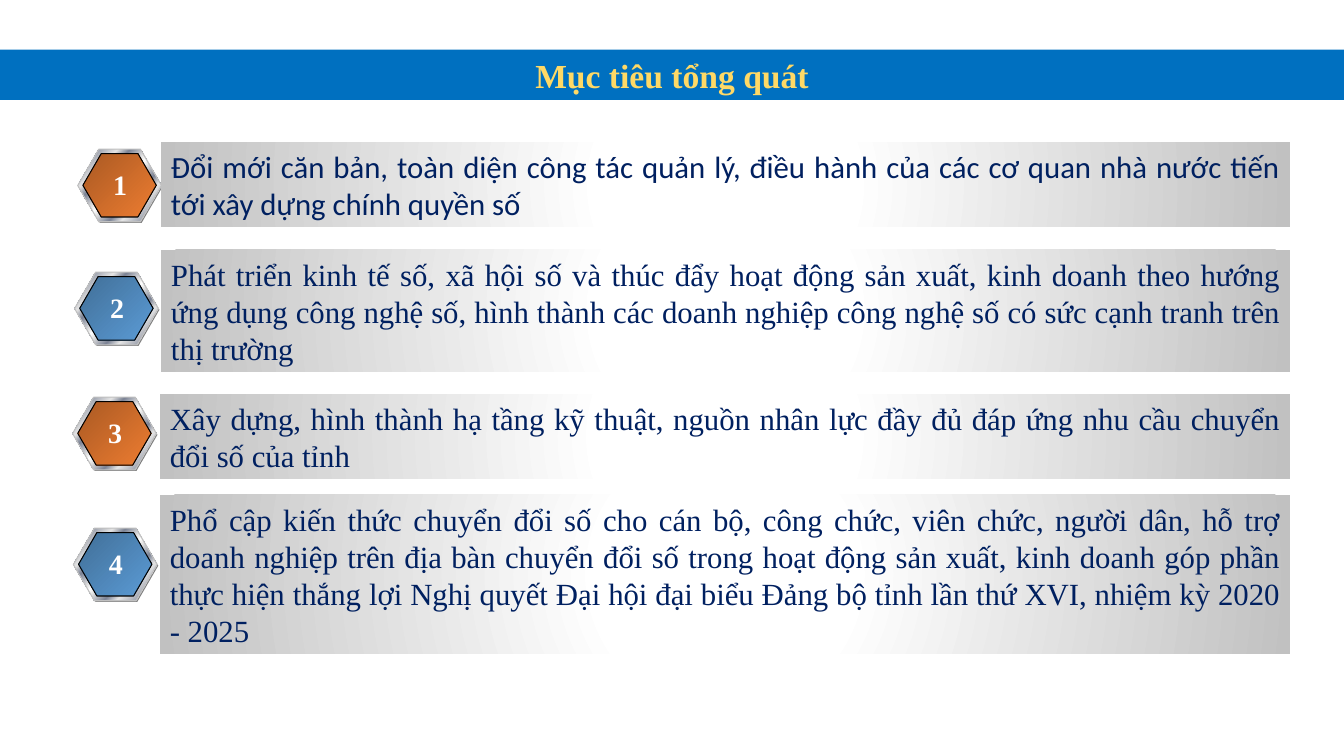
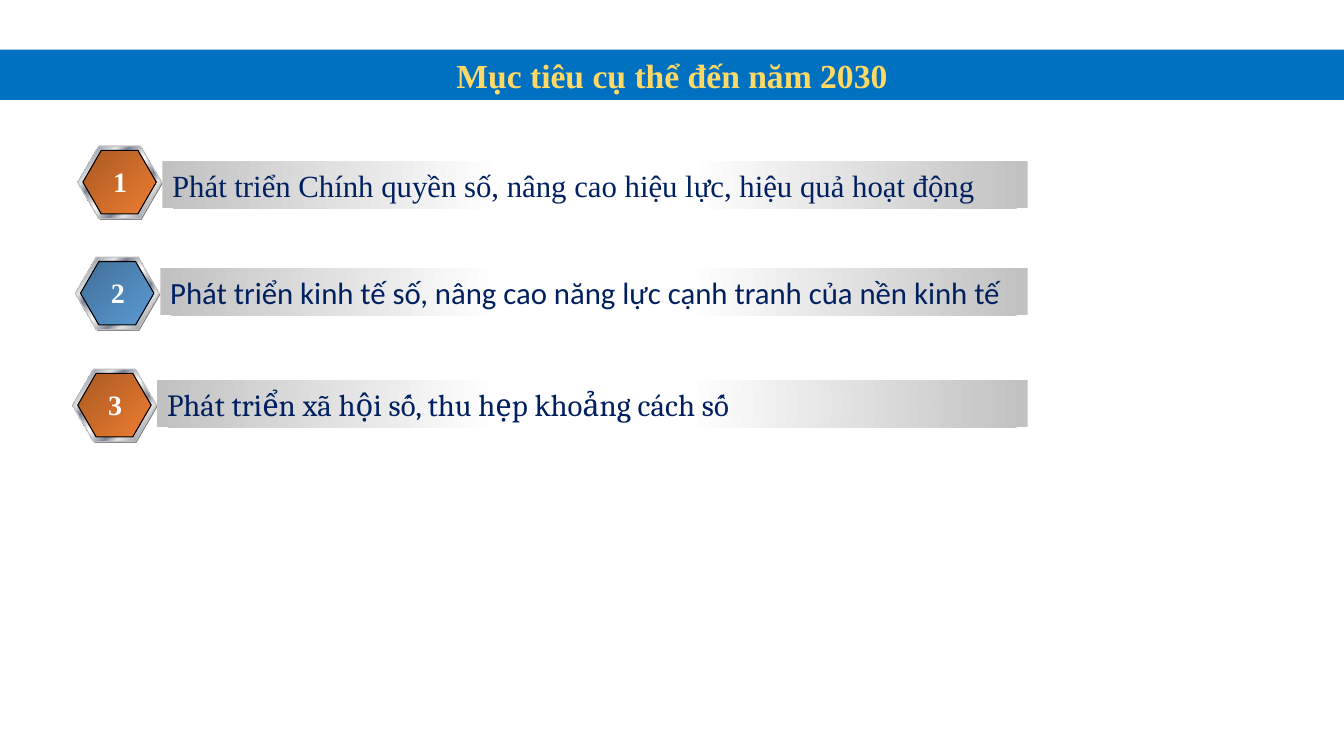
from dataclasses import dataclass

from pptx import Presentation
from pptx.dml.color import RGBColor
from pptx.enum.shapes import MSO_SHAPE
from pptx.enum.text import MSO_ANCHOR, PP_ALIGN
from pptx.oxml import parse_xml
from pptx.oxml.ns import nsdecls
from pptx.util import Cm, Pt


@dataclass(frozen=True)
class Theme:
    """Colours, gradients, fonts and type sizes of the deck."""
    band: str = "0070C0"
    title: str = "FFD966"
    body: str = "002060"
    number: str = "FFFFFF"
    rim_shade: str = "808080"
    rim_line: str = "C0C0C0"
    core_line: str = "000000"
    cores: tuple = (
        ((0, "AA5923"), (100, "ED7D31")),
        ((0, "416F98"), (100, "5B9BD5")),
    )
    metal: tuple = (
        (0, "E6E6E6"), (8, "7D8496"), (26, "E6E6E6"), (34, "7D8496"),
        (46, "E6E6E6"), (50, "FFFFFF"), (54, "E6E6E6"), (66, "7D8496"),
        (74, "E6E6E6"), (93, "7D8496"), (100, "E6E6E6"),
    )
    bar: tuple = ((22, "FFFFFF"), (100, "C1C1C1"))
    serif: str = "Times New Roman"
    sans: str = "Calibri"
    book: str = "Cambria"
    title_size: int = 24
    body_size: int = 22
    number_size: int = 20


@dataclass(frozen=True)
class Goal:
    """One numbered goal, with positions in centimetres."""
    text: str
    badge: tuple
    bar: tuple
    lines: int = 1
    font: str = Theme.serif


DIAGONAL = '<a:lin ang="2700000" scaled="1"/>'
RADIAL = ('<a:path path="circle"><a:fillToRect l="50000" t="50000" '
          'r="50000" b="50000"/></a:path>')


class Builder:
    """Draws styled elements on the current page."""

    def __init__(self, theme):
        """Open a widescreen deck."""
        self.theme = theme
        self.deck = Presentation()
        self.deck.slide_width = Cm(33.87)
        self.deck.slide_height = Cm(19.05)
        self.page = None

    def add_page(self, title):
        """Start a page with its title band."""
        self.page = self.deck.slides.add_slide(self.deck.slide_layouts[6])
        theme = self.theme
        band = self.shape(self.page.shapes, MSO_SHAPE.RECTANGLE,
                          (0, 1.25, 33.87, 1.27), theme.band)
        self.label(band, title, theme.serif, theme.title_size, theme.title,
                   PP_ALIGN.CENTER, bold=True)

    def shape(self, shapes, kind, place, fill, shading=DIAGONAL, line=None):
        """Add a preset shape with a plain or gradient fill."""
        shape = shapes.add_shape(kind, *(Cm(value) for value in place))
        shape.shadow.inherit = False
        if isinstance(fill, str):
            shape.fill.solid()
            shape.fill.fore_color.rgb = RGBColor.from_string(fill)
        else:
            self.shade(shape, fill, shading)
        if line:
            shape.line.color.rgb = RGBColor.from_string(line)
            shape.line.width = Pt(0.75)
        else:
            shape.line.fill.background()
        return shape

    def shade(self, shape, stops, shading):
        """Give a shape a gradient fill."""
        marks = "".join(
            f'<a:gs pos="{position * 1000}"><a:srgbClr val="{colour}"/></a:gs>'
            for position, colour in stops)
        gradient = parse_xml(
            f'<a:gradFill {nsdecls("a")} rotWithShape="1">'
            f'<a:gsLst>{marks}</a:gsLst>{shading}</a:gradFill>')
        shape._element.spPr.find("{*}prstGeom").addnext(gradient)

    def label(self, box, text, font, size, colour, align, bold=False, wrap=True):
        """Put one paragraph into a box."""
        frame = box.text_frame
        frame.word_wrap = wrap
        frame.vertical_anchor = MSO_ANCHOR.MIDDLE
        para = frame.paragraphs[0]
        para.alignment = align
        span = para.add_run()
        span.text = text
        span.font.name = font
        span.font.size = Pt(size)
        span.font.bold = bold
        span.font.color.rgb = RGBColor.from_string(colour)

    def badge(self, left, top, core):
        """Draw a hexagon with a metal rim."""
        theme = self.theme
        group = self.page.shapes.add_group_shape()
        layers = (
            ((left + 0.03, top + 0.03, 2.11, 1.83), theme.rim_shade, None),
            ((left, top, 2.11, 1.83), theme.metal, theme.rim_line),
            ((left + 0.13, top + 0.11, 1.85, 1.6), core, theme.core_line),
        )
        for place, fill, line in layers:
            hexagon = self.shape(group.shapes, MSO_SHAPE.HEXAGON, place, fill,
                                 line=line)
            hexagon.adjustments[0] = 0.29

    def number(self, left, top, value):
        """Set the number of a badge."""
        theme = self.theme
        box = self.page.shapes.add_textbox(
            Cm(left + 0.64), Cm(top + 0.33), Cm(0.86), Cm(1.12))
        self.label(box, str(value), theme.serif, theme.number_size,
                   theme.number, PP_ALIGN.CENTER, bold=True, wrap=False)

    def bar(self, goal, right):
        """Draw the text bar of a goal up to the right edge."""
        theme = self.theme
        left, top = goal.bar
        place = (left, top, right - left, 0.25 + 0.94 * goal.lines)
        box = self.shape(self.page.shapes, MSO_SHAPE.RECTANGLE, place,
                         theme.bar, RADIAL)
        self.label(box, goal.text, goal.font, theme.body_size, theme.body,
                   PP_ALIGN.JUSTIFY)

    def goals(self, goals, right):
        """Draw a numbered list of goals in alternating colours."""
        cores = self.theme.cores
        for index, goal in enumerate(goals):
            self.badge(*goal.badge, cores[index % len(cores)])
            self.bar(goal, right)
            self.number(*goal.badge, index + 1)


GENERAL_GOALS = (
    Goal("Đổi mới căn bản, toàn diện công tác quản lý, điều hành của các cơ quan "
         "nhà nước tiến tới xây dựng chính quyền số",
         (1.96, 3.76), (4.06, 3.58), 2, Theme.sans),
    Goal("Phát triển kinh tế số, xã hội số và thúc đẩy hoạt động sản xuất, kinh "
         "doanh theo hướng ứng dụng công nghệ số, hình thành các doanh nghiệp "
         "công nghệ số có sức cạnh tranh trên thị trường",
         (1.88, 6.86), (4.06, 6.3), 3),
    Goal("Xây dựng, hình thành hạ tầng kỹ thuật, nguồn nhân lực đầy đủ đáp ứng "
         "nhu cầu chuyển đổi số của tỉnh",
         (1.83, 10.01), (4.03, 9.93), 2),
    Goal("Phổ cập kiến thức chuyển đổi số cho cán bộ, công chức, viên chức, người "
         "dân, hỗ trợ doanh nghiệp trên địa bàn chuyển đổi số trong hoạt động sản "
         "xuất, kinh doanh góp phần thực hiện thắng lợi Nghị quyết Đại hội đại "
         "biểu Đảng bộ tỉnh lần thứ XVI, nhiệm kỳ 2020 - 2025",
         (1.85, 13.31), (4.03, 12.47), 4),
)

GOALS_2030 = (
    Goal("Phát triển Chính quyền số, nâng cao hiệu lực, hiệu quả hoạt động",
         (1.96, 3.68), (4.09, 4.06)),
    Goal("Phát triển kinh tế số, nâng cao năng lực cạnh tranh của nền kinh tế",
         (1.9, 6.48), (4.04, 6.76), font=Theme.sans),
    Goal("Phát triển xã hội số, thu hẹp khoảng cách số",
         (1.83, 9.3), (3.96, 9.58), font=Theme.book),
)


def main():
    """Build and save the deck."""
    builder = Builder(Theme())
    builder.add_page("Mục tiêu tổng quát")
    builder.goals(GENERAL_GOALS, right=32.51)
    builder.add_page("Mục tiêu cụ thể đến năm 2030")
    builder.goals(GOALS_2030, right=25.9)
    builder.deck.save("out.pptx")


if __name__ == "__main__":
    main()
